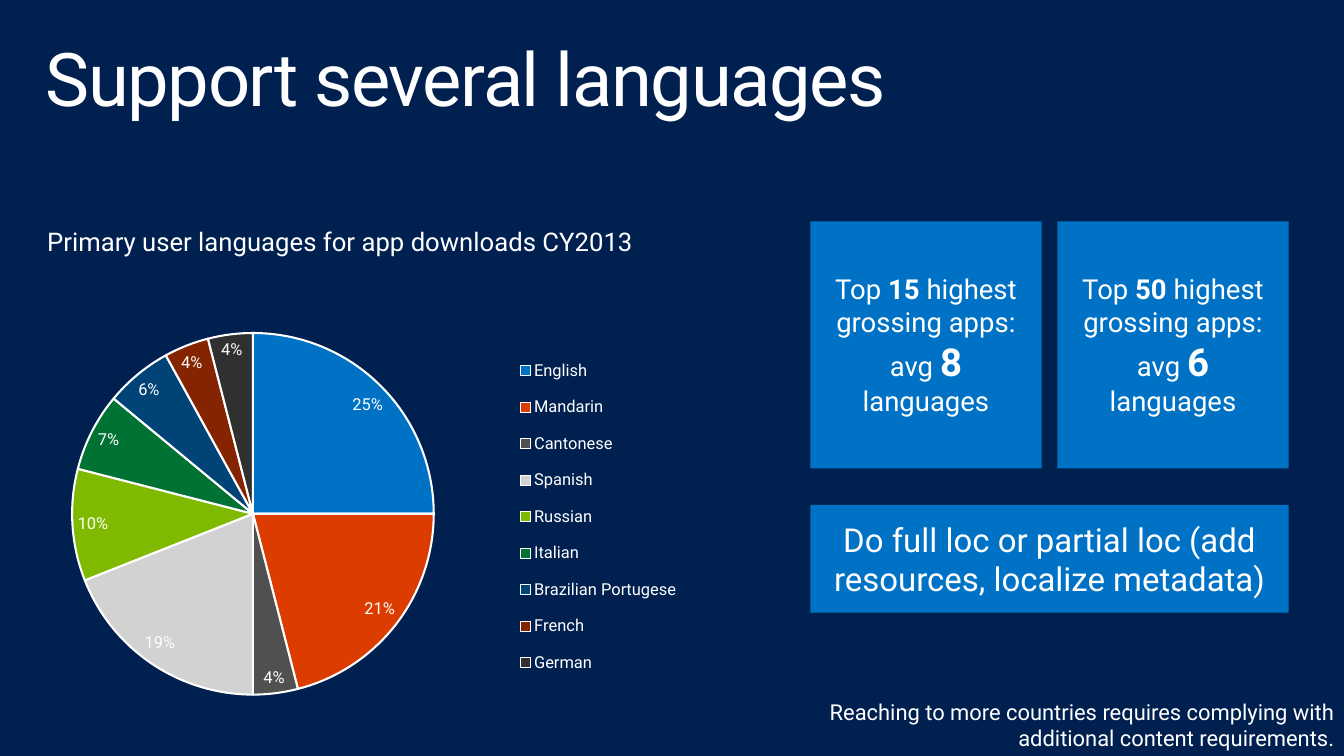
from dataclasses import dataclass

from lxml.etree import SubElement
from pptx import Presentation
from pptx.chart.data import CategoryChartData
from pptx.dml.color import RGBColor
from pptx.enum.chart import XL_CHART_TYPE as ChartType
from pptx.enum.chart import XL_LABEL_POSITION as LabelPosition
from pptx.enum.chart import XL_LEGEND_POSITION as LegendPosition
from pptx.enum.shapes import MSO_SHAPE as Shape
from pptx.enum.text import MSO_ANCHOR as Anchor
from pptx.enum.text import PP_ALIGN as Align
from pptx.oxml.ns import qn
from pptx.util import Inches, Pt

TITLE = "Support several languages"
CHART_TITLE = "Primary user languages for app downloads CY2013"
LANGUAGES = [
    ("English", 25, "0072C6"),
    ("Mandarin", 21, "DC3C00"),
    ("Cantonese", 4, "505050"),
    ("Spanish", 19, "D2D2D2"),
    ("Russian", 10, "7FBA00"),
    ("Italian", 7, "007233"),
    ("Brazilian Portugese", 6, "004477"),
    ("French", 4, "842400"),
    ("German", 4, "303030"),
]
APP_AVERAGES = [("15", "8"), ("50", "6")]
ADVICE = "Do full loc or partial loc (add resources, localize metadata)"
FOOTNOTE = "Reaching to more countries requires complying with additional content requirements."


@dataclass(frozen=True)
class Theme:
    font: str = "Roboto"
    background: str = "002050"
    tile: str = "0072C6"
    text: str = "FFFFFF"
    title: float = 54
    figure: float = 28
    advice: float = 24
    body: float = 20
    chart_title: float = 18.7
    note: float = 16
    label: float = 12


THEME = Theme()
CHART_BOX = (-2.07, 2.06, 11.02, 5.35)
PIE_BOX = (0.73, 3.37, 3.66, 3.66)
LEGEND_BOX = (5.18, 3.48, 1.75, 3.5)
CHART_TITLE_AT = (0.43, 2.23)
TILE_LEFT, TILE_TOP, TILE_WIDTH, TILE_HEIGHT, TILE_GAP = 8.2, 2.24, 2.34, 2.5, 0.16
ADVICE_TOP, ADVICE_HEIGHT = 5.11, 1.09


def color(value):
    return RGBColor.from_string(value)


def style_font(font, size, bold=False):
    font.name, font.size, font.bold = THEME.font, Pt(size), bold
    font.color.rgb = color(THEME.text)


def write_runs(paragraph, runs, align):
    """Add (text, size, bold) runs to a paragraph."""
    paragraph.alignment = align
    for text, size, bold in runs:
        run = paragraph.add_run()
        run.text = text
        style_font(run.font, size, bold)


def set_margins(frame, side, end):
    frame.margin_left = frame.margin_right = Inches(side)
    frame.margin_top = frame.margin_bottom = Inches(end)


def add_tile(slide, box, runs):
    tile = slide.shapes.add_shape(Shape.RECTANGLE, *map(Inches, box))
    tile.shadow.inherit = False
    tile.fill.solid()
    tile.fill.fore_color.rgb = color(THEME.tile)
    tile.line.fill.background()
    frame = tile.text_frame
    frame.word_wrap = True
    frame.vertical_anchor = Anchor.MIDDLE
    set_margins(frame, 0.2, 0.14)
    write_runs(frame.paragraphs[0], runs, Align.CENTER)


def place_in_chart(chart, part, box, before, inner=False):
    """Fix a chart part at slide inches, its layout going ahead of the tag named before."""
    element = chart.element.find(f".//{qn(part)}")
    for old in element.findall(qn("c:layout")):
        element.remove(old)
    layout = SubElement(element, qn("c:layout"))
    element.find(qn(before)).addprevious(layout)
    manual = SubElement(layout, qn("c:manualLayout"))
    left, top, width, height = CHART_BOX
    fractions = [(box[0] - left) / width, (box[1] - top) / height]
    fractions += [length / whole for length, whole in zip(box[2:], (width, height))]
    settings = [("layoutTarget", "inner")] if inner else []
    settings += [("xMode", "edge"), ("yMode", "edge")]
    settings += [(name, f"{fraction:.4f}") for name, fraction in zip("xywh", fractions)]
    for name, value in settings:
        SubElement(manual, qn(f"c:{name}")).set("val", value)


def add_language_chart(slide):
    data = CategoryChartData()
    data.categories = [name for name, _, _ in LANGUAGES]
    data.add_series("Series 1", [share for _, share, _ in LANGUAGES])
    chart = slide.shapes.add_chart(ChartType.PIE, *map(Inches, CHART_BOX), data).chart
    style_font(chart.font, THEME.label)

    chart.has_title = True
    write_runs(chart.chart_title.text_frame.paragraphs[0],
               [(CHART_TITLE, THEME.chart_title, False)], Align.LEFT)
    chart.has_legend = True
    chart.legend.position = LegendPosition.RIGHT
    chart.legend.include_in_layout = False
    style_font(chart.legend.font, THEME.label)

    plot = chart.plots[0]
    plot.vary_by_categories = True
    plot.has_data_labels = True
    labels = plot.data_labels
    labels.show_percentage, labels.show_value = True, False
    labels.number_format, labels.number_format_is_linked = "0%", False
    labels.position = LabelPosition.BEST_FIT
    style_font(labels.font, THEME.label)
    for index, (_, _, fill) in enumerate(LANGUAGES):
        slice_format = plot.series[0].points[index].format
        slice_format.fill.solid()
        slice_format.fill.fore_color.rgb = color(fill)
        slice_format.line.color.rgb = color(THEME.text)
        slice_format.line.width = Pt(1.5)

    place_in_chart(chart, "c:title", CHART_TITLE_AT, "c:overlay")
    place_in_chart(chart, "c:plotArea", PIE_BOX, "c:pieChart", inner=True)
    place_in_chart(chart, "c:legend", LEGEND_BOX, "c:overlay")


def add_title(slide):
    title = slide.shapes.title
    title.left, title.top, title.width, title.height = map(Inches, (0.3, 0.33, 13, 1))
    frame = title.text_frame
    frame.word_wrap = True
    frame.vertical_anchor = Anchor.TOP
    set_margins(frame, 0.16, 0.1)
    paragraph = frame.paragraphs[0]
    paragraph.line_spacing = 0.9
    write_runs(paragraph, [(TITLE, THEME.title, False)], Align.LEFT)
    paragraph.runs[0].font._element.set("spc", "-100")


def add_footnote(slide):
    box = slide.shapes.add_textbox(*map(Inches, (8.11, 7.02, 5.49, 0.64)))
    box.text_frame.word_wrap = True
    write_runs(box.text_frame.paragraphs[0], [(FOOTNOTE, THEME.note, False)], Align.RIGHT)


def main():
    presentation = Presentation()
    presentation.slide_width, presentation.slide_height = Inches(13.6), Inches(7.65)
    slide = presentation.slides.add_slide(presentation.slide_layouts.get_by_name("Title Only"))
    slide.background.fill.solid()
    slide.background.fill.fore_color.rgb = color(THEME.background)

    add_title(slide)
    add_language_chart(slide)
    for index, (rank, average) in enumerate(APP_AVERAGES):
        left = TILE_LEFT + index * (TILE_WIDTH + TILE_GAP)
        add_tile(slide, (left, TILE_TOP, TILE_WIDTH, TILE_HEIGHT), [
            ("Top ", THEME.body, False),
            (rank, THEME.body, True),
            (" highest grossing apps: avg ", THEME.body, False),
            (average, THEME.figure, True),
            (" languages", THEME.body, False),
        ])
    advice_width = len(APP_AVERAGES) * (TILE_WIDTH + TILE_GAP) - TILE_GAP
    add_tile(slide, (TILE_LEFT, ADVICE_TOP, advice_width, ADVICE_HEIGHT),
             [(ADVICE, THEME.advice, False)])
    add_footnote(slide)
    presentation.save("out.pptx")


if __name__ == "__main__":
    main()
